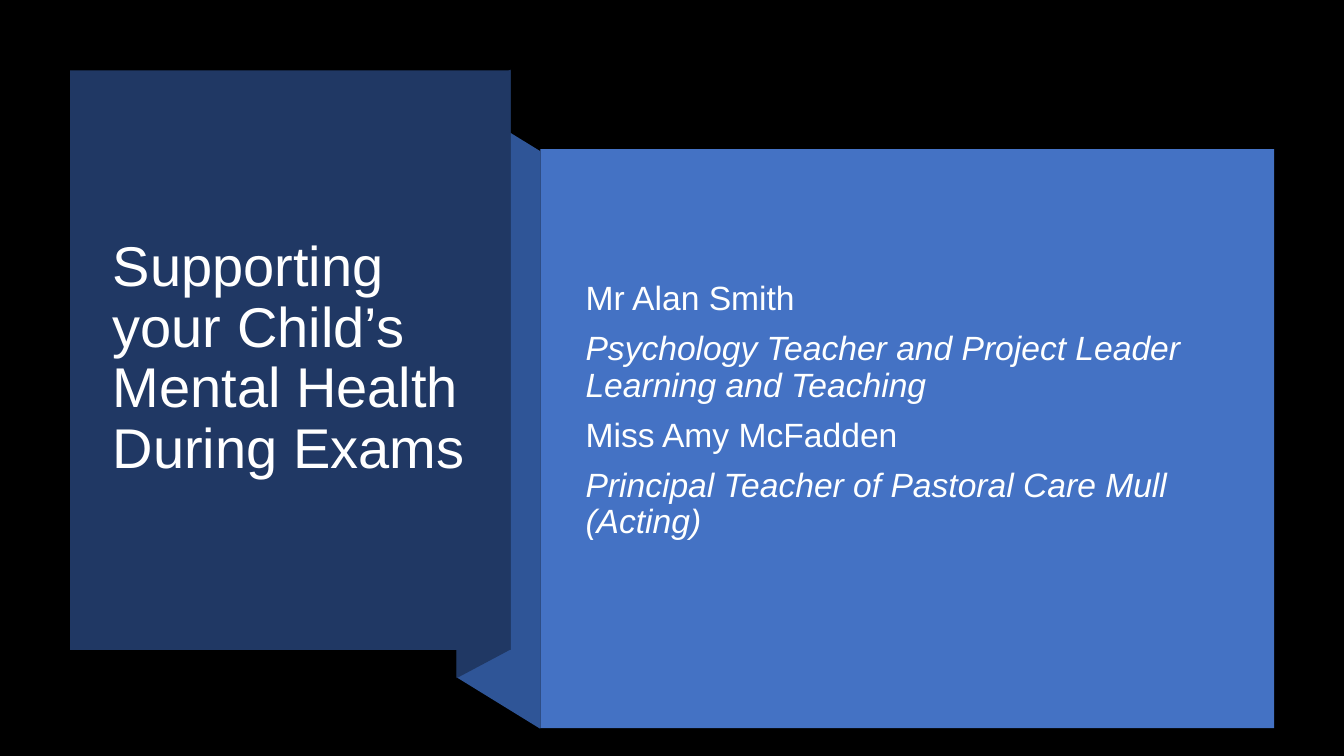
"""Build the title slide of a talk on mental health during exams."""
from pptx import Presentation
from pptx.dml.color import RGBColor
from pptx.enum.shapes import MSO_SHAPE
from pptx.enum.text import MSO_ANCHOR
from pptx.util import Inches, Pt


def paint(fill, color):
    fill.solid()
    fill.fore_color.rgb = RGBColor.from_string(color)


def add_text(page, area, lines, size, color, space=0, top=0.05, bottom=0.05):
    box = page.shapes.add_textbox(*area)
    frame = box.text_frame
    frame.word_wrap = True
    frame.vertical_anchor = MSO_ANCHOR.MIDDLE
    frame.margin_top, frame.margin_bottom = Inches(top), Inches(bottom)
    for index, (text, italic) in enumerate(lines):
        para = frame.add_paragraph() if index else frame.paragraphs[0]
        para.line_spacing = 0.9
        para.space_before = Pt(space if index else 0)
        span = para.add_run()
        span.text = text
        span.font.name = "Arial"
        span.font.size = Pt(size)
        span.font.italic = italic
        span.font.color.rgb = RGBColor.from_string(color)


deck = Presentation()
deck.slide_width, deck.slide_height = Inches(13.333), Inches(7.5)
column, row = deck.slide_width / 100, deck.slide_height / 100
page = deck.slides.add_slide(deck.slide_layouts[6])
paint(page.background.fill, "000000")

NAVY, FOLD_BLUE, BLUE = "203864", "2F5597", "4472C4"
fold_left, title_right, body_left = 33.98, 38, 40.2

folds = [
    (FOLD_BLUE, [(body_left, 96.4), (fold_left, 89.6), (fold_left, 13.2), (body_left, 20)]),
    (NAVY, [(title_right, 85.9), (fold_left, 89.7), (fold_left, 13.1), (title_right, 9.2)]),
]
for color, corners in folds:
    points = [(x * column, y * row) for x, y in corners]
    builder = page.shapes.build_freeform(*points[0], scale=1.0)
    builder.add_line_segments(points[1:], close=True)
    fold = builder.convert_to_shape()
    fold.shadow.inherit = False
    paint(fold.fill, color)
    fold.line.fill.background()

panels = [
    (NAVY, 5.21, 9.3, title_right, 85.97),
    (BLUE, body_left, 19.73, 94.8, 96.3),
]
for color, left, top, right, bottom in panels:
    panel = page.shapes.add_shape(
        MSO_SHAPE.RECTANGLE, int(left * column), int(top * row),
        int((right - left) * column), int((bottom - top) * row))
    panel.shadow.inherit = False
    paint(panel.fill, color)
    panel.line.fill.background()

title_area = [int(length) for length in (7.65 * column, 14.27 * row, 27.83 * column, 66.53 * row)]
add_text(page, title_area, [("Supporting your Child’s Mental Health During Exams", False)],
         size=40, color="FFFFFF")

speakers = [
    ("Mr Alan Smith", False),
    ("Psychology Teacher and Project Leader Learning and Teaching", True),
    ("Miss Amy McFadden", False),
    ("Principal Teacher of Pastoral Care Mull (Acting)", True),
]
speaker_area = [int(length) for length in (42.83 * column, 25.07 * row, 48.83 * column, 63.2 * row)]
add_text(page, speaker_area, speakers, size=24, color="FEFFFF", space=10, top=0.19, bottom=0.53)

deck.save("out.pptx")
